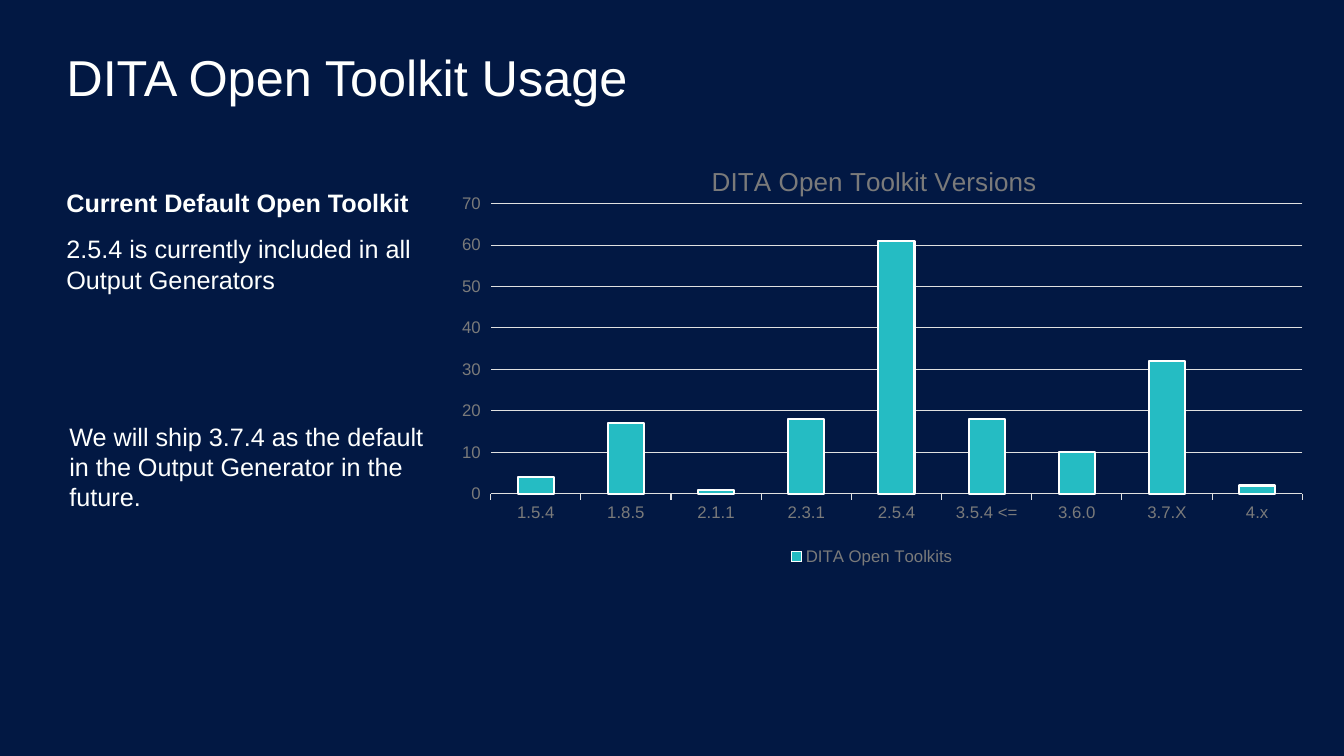
from pptx import Presentation
from pptx import util as u
from pptx.chart.data import CategoryChartData
from pptx.dml.color import RGBColor
from pptx.enum import chart as ch, text
from pptx.oxml import parse_xml
from pptx.oxml.ns import nsdecls

PX = 9144  # EMU per px, 100 px to the inch
FONT = "Arial"
NAVY = RGBColor(0x02, 0x18, 0x43)
WHITE = RGBColor(0xFE, 0xFF, 0xFE)
TEAL = RGBColor(0x25, 0xBC, 0xC3)
GREY = RGBColor(0x7A, 0x7A, 0x7A)
PALE = RGBColor(0xE0, 0xE0, 0xE0)
DARK = RGBColor(0x33, 0x33, 0x33)

TITLE_BOX = (56, 37, 1218, 86)
NOTES_BOX = (56, 178, 376, 328)
CHART_BOX = (434, 141, 862, 424)

VERSIONS = {"1.5.4": 4, "1.8.5": 17, "2.1.1": 1, "2.3.1": 18, "2.5.4": 61,
            "3.5.4 <=": 18, "3.6.0": 10, "3.7.X": 32, "4.x": 2}


def emu(box):
    return [length * PX for length in box]


def style_font(font, size, color, bold=False):
    font.name = FONT
    font.size = u.Pt(size)
    font.bold = bold
    font.color.rgb = color


def style_line(line, color, width):
    line.color.rgb = color
    line.width = u.Pt(width)


def add_text(page, box, words, size=18, bold=False, middle=False, before=10, spacing=1.0):
    frame = page.shapes.add_textbox(*emu(box)).text_frame
    frame.word_wrap = True
    frame.vertical_anchor = text.MSO_ANCHOR.MIDDLE if middle else text.MSO_ANCHOR.TOP
    para = frame.paragraphs[0]
    para.space_before = u.Pt(before)
    para.line_spacing = spacing
    span = para.add_run()
    span.text = words
    style_font(span.font, size, WHITE, bold)


def add_title(page, box):
    add_text(page, box, "DITA Open Toolkit Usage", size=36, middle=True, before=0, spacing=0.9)


def add_notes(page, box):
    left, top, width, height = box
    body = 93
    add_text(page, (left, top, width - 2, 46), "Current Default Open Toolkit",
             bold=True, middle=True)
    add_text(page, (left, top + 49, width - 2, body),
             "2.5.4 is currently included in all Output Generators")
    add_text(page, (left + 3, top + height - body, width, body),
             "We will ship 3.7.4 as the default in the Output Generator in the future.")


def make_layout(target="", **fractions):
    """Manual layout in fractions of the chart area."""
    inner = f'<c:layoutTarget val="{target}"/>' if target else ""
    modes = "".join(f'<c:{axis}Mode val="edge"/>' for axis in "xy")
    sizes = "".join(f'<c:{name} val="{value}"/>' for name, value in fractions.items())
    return parse_xml(f'<c:layout {nsdecls("c")}><c:manualLayout>{inner}{modes}{sizes}'
                     '</c:manualLayout></c:layout>')


def add_version_chart(page, box):
    data = CategoryChartData()
    data.categories = list(VERSIONS)
    data.add_series("DITA Open Toolkits", list(VERSIONS.values()))
    chart = page.shapes.add_chart(ch.XL_CHART_TYPE.COLUMN_CLUSTERED, *emu(box), data).chart
    style_font(chart.font, 10, DARK)

    # Chart title
    chart.has_title = True
    span = chart.chart_title.text_frame.paragraphs[0].add_run()
    span.text = "DITA Open Toolkit Versions"
    style_font(span.font, 18.6, GREY)
    chart.chart_title.include_in_layout = False

    # Columns
    plot = chart.plots[0]
    plot.gap_width = 150
    plot.vary_by_categories = False
    columns = plot.series[0]
    columns.format.fill.solid()
    columns.format.fill.fore_color.rgb = TEAL
    style_line(columns.format.line, WHITE, 1.5)

    # Axes
    for axis in (chart.category_axis, chart.value_axis):
        axis.major_tick_mark = ch.XL_TICK_MARK.OUTSIDE
        axis.minor_tick_mark = ch.XL_TICK_MARK.NONE
        style_font(axis.tick_labels.font, 12, GREY)
    style_line(chart.category_axis.format.line, PALE, 0.75)
    values = chart.value_axis
    values.format.line.fill.background()
    values.minimum_scale, values.maximum_scale, values.major_unit = 0, 70, 10
    values.has_major_gridlines = True
    style_line(values.major_gridlines.format.line, PALE, 0.75)

    # Legend
    chart.has_legend = True
    chart.legend.position = ch.XL_LEGEND_POSITION.BOTTOM
    chart.legend.include_in_layout = False
    style_font(chart.legend.font, 12, GREY)

    # Places of the title and the plot
    for old in chart.element.xpath("c:chart/c:title/c:layout | c:chart/c:plotArea/c:layout"):
        old.getparent().remove(old)
    chart.element.xpath("c:chart/c:title/c:tx")[0].addnext(make_layout(x=0.31, y=0.04))
    chart.element.xpath("c:chart/c:plotArea")[0].insert(
        0, make_layout("inner", x=0.061, y=0.144, w=0.934, h=0.679))


def main():
    deck = Presentation()
    deck.slide_width, deck.slide_height = emu((1333, 750))
    page = deck.slides.add_slide(deck.slide_layouts[6])
    page.background.fill.solid()
    page.background.fill.fore_color.rgb = NAVY
    add_notes(page, NOTES_BOX)
    add_title(page, TITLE_BOX)
    add_version_chart(page, CHART_BOX)
    deck.save("out.pptx")


if __name__ == "__main__":
    main()
